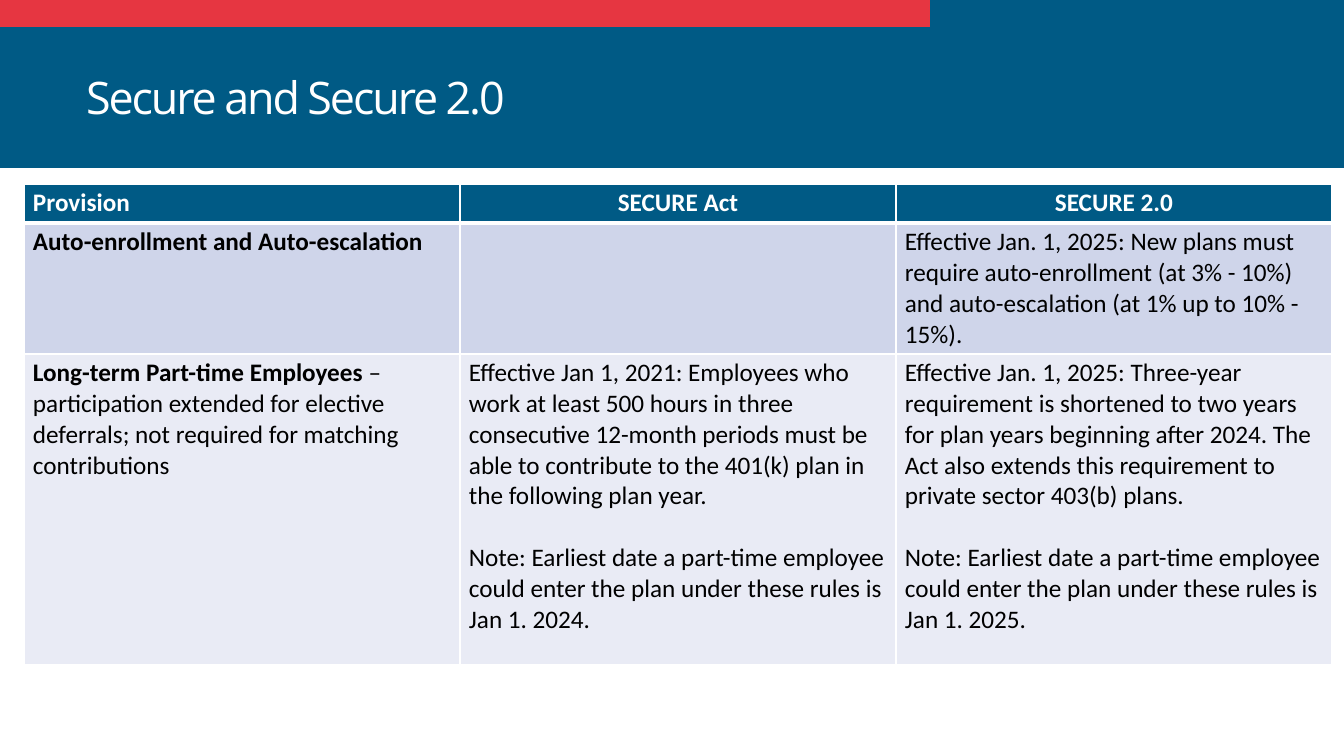
import pptx
import pptx.util
import pptx.enum.shapes
import pptx.enum.text
import pptx.dml.color
import pptx.oxml
import pptx.oxml.ns

TITLE = "Secure and Secure 2.0"
ROWS = [
    [[[("Provision", True)]], [[("SECURE Act", True)]], [[("SECURE 2.0", True)]]],
    [
        [[("Auto-enrollment and Auto-escalation", True)]],
        [],
        [[("Effective Jan. 1, 2025: New plans must require auto-enrollment "
           "(at 3% - 10%) and auto-escalation (at 1% up to 10% - 15%).", False)]],
    ],
    [
        [[("Long-term Part-time Employees ", True),
          ("– participation extended for elective deferrals; "
           "not required for matching contributions", False)]],
        [[("Effective Jan 1, 2021: Employees who work at least 500 hours in three "
           "consecutive 12-month periods must be able to contribute to the 401(k) "
           "plan in the following plan year.", False)],
         [("Note: Earliest date a part-time employee could enter the plan "
           "under these rules is Jan 1. 2024.", False)]],
        [[("Effective Jan. 1, 2025: Three-year requirement is shortened to two years "
           "for plan years beginning after 2024. The Act also extends this "
           "requirement to private sector 403(b) plans.", False)],
         [("Note: Earliest date a part-time employee could enter the plan "
           "under these rules is Jan 1. 2025.", False)]],
    ],
]
COLORS = {"blue": "005A85", "red": "E63641", "white": "FFFFFF", "black": "000000",
          "mid": "CFD5EA", "pale": "E9EBF5"}
BANDS = [((0, 0, 1344, 168), "blue"), ((0, 0, 930, 27), "red")]
FILLS = ["blue", "mid", "pale"]
HEIGHTS = [39, 130, 311]
COL = 436
SCALE = 914400 / 100.8


def px(n):
    return pptx.util.Emu(round(n * SCALE))


def rgb(name):
    return pptx.dml.color.RGBColor.from_string(COLORS[name])


def paint(fill, name):
    fill.solid()
    fill.fore_color.rgb = rgb(name)


def style(font, face, size, color):
    font.name = face
    font.size = pptx.util.Pt(size)
    font.color.rgb = rgb(color)


def border(cell, row):
    widths = {"L": 1, "R": 1, "T": 3 if row == 1 else 1, "B": 3 if row == 0 else 1}
    for side, width in widths.items():
        cell._tc.get_or_add_tcPr().append(pptx.oxml.parse_xml(
            f'<a:ln{side} {pptx.oxml.ns.nsdecls("a")} w="{pptx.util.Pt(width)}">'
            f'<a:solidFill><a:srgbClr val="{COLORS["white"]}"/></a:solidFill>'
            f'</a:ln{side}>'))


def write(cell, paras, row, col):
    frame = cell.text_frame
    for i, parts in enumerate(paras):
        para = frame.add_paragraph() if i else frame.paragraphs[0]
        if i:
            para.space_before = pptx.util.Pt(22)
        if row == 0 and col:
            para.alignment = pptx.enum.text.PP_ALIGN.CENTER
        for text, bold in parts:
            run = para.add_run()
            run.text = text
            style(run.font, "Calibri", 18, "black" if row else "white")
            run.font.bold = bold


def add_bands(slide):
    for box, color in BANDS:
        band = slide.shapes.add_shape(
            pptx.enum.shapes.MSO_SHAPE.RECTANGLE, *map(px, box))
        band.shadow.inherit = False
        paint(band.fill, color)
        band.line.fill.background()


def add_title(slide):
    title = slide.shapes.title
    slide.shapes._spTree.append(title._element)
    title.left, title.top, title.width, title.height = map(px, (76, 27, 714, 146))
    frame = title.text_frame
    frame.text = TITLE
    frame.word_wrap = True
    frame.vertical_anchor = pptx.enum.text.MSO_ANCHOR.MIDDLE
    para = frame.paragraphs[0]
    para.alignment = pptx.enum.text.PP_ALIGN.LEFT
    para.line_spacing = 0.9
    run = para.runs[0]
    style(run.font, "Open Sans", 32, "white")
    run.font._element.set("spc", "-150")


def add_grid(slide):
    count = len(ROWS[0])
    grid = slide.shapes.add_table(len(ROWS), count, px(24), px(184),
                                  px(COL * count), px(sum(HEIGHTS))).table
    grid.horz_banding = False
    for col in grid.columns:
        col.width = px(COL)
    for r, row in enumerate(ROWS):
        grid.rows[r].height = px(HEIGHTS[r])
        for c, paras in enumerate(row):
            cell = grid.cell(r, c)
            cell.margin_left = cell.margin_right = px(9)
            cell.margin_top = cell.margin_bottom = px(4)
            border(cell, r)
            paint(cell.fill, FILLS[r])
            write(cell, paras, r, c)


def main():
    deck = pptx.Presentation()
    deck.slide_width, deck.slide_height = px(1344), px(756)
    slide = deck.slides.add_slide(deck.slide_layouts[5])
    add_bands(slide)
    add_title(slide)
    add_grid(slide)
    deck.save("out.pptx")


if __name__ == "__main__":
    main()
